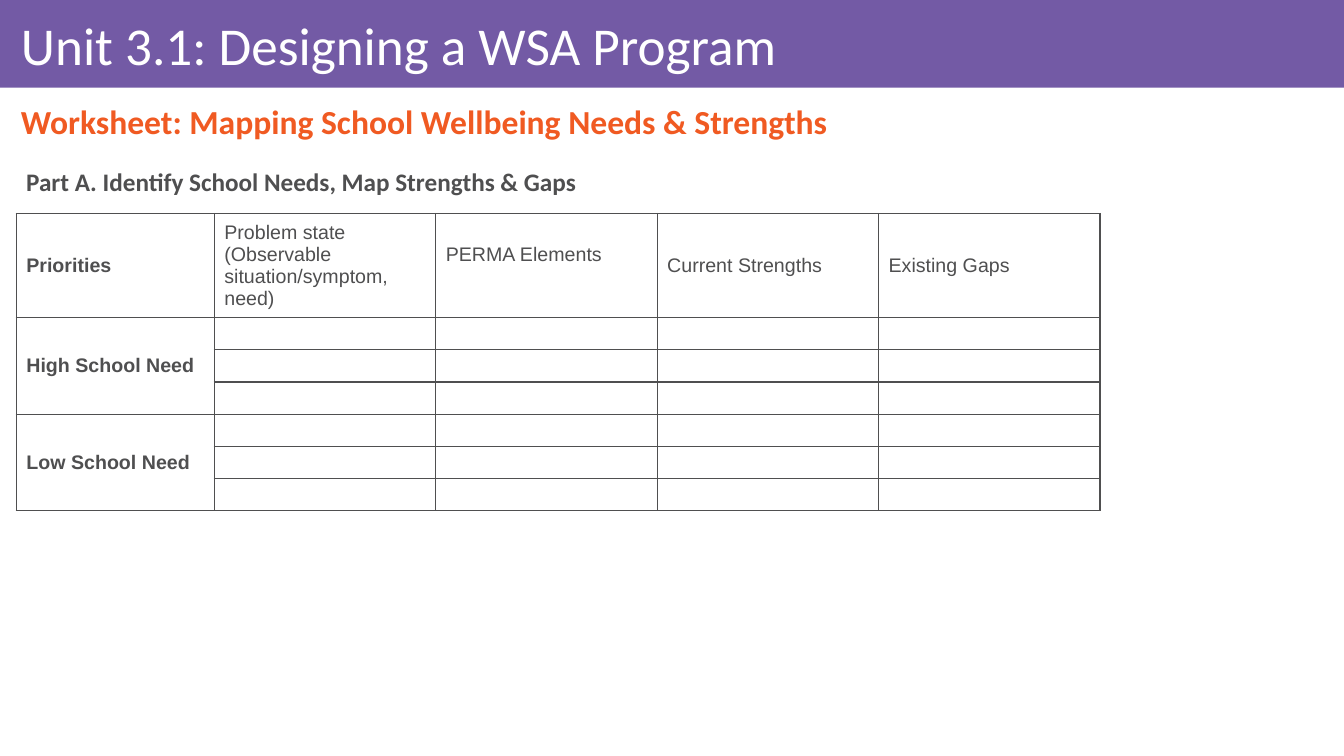
"""Build the worksheet slide for mapping school wellbeing needs and strengths."""
from lxml.etree import SubElement
from pptx import Presentation
from pptx.dml.color import RGBColor
from pptx.enum.shapes import MSO_SHAPE
from pptx.enum.text import MSO_ANCHOR, PP_ALIGN
from pptx.oxml.ns import qn
from pptx.util import Cm, Pt

COLORS = {"purple": "735AA5", "orange": "F05A22", "gray": "4F4F50", "white": "FFFFFF"}


def add_span(para, text, font, size, color, bold=False):
    span = para.add_run()
    span.text = text
    span.font.name = font
    span.font.size = Pt(size)
    span.font.bold = bold
    span.font.color.rgb = RGBColor.from_string(COLORS[color])


def add_borders(cell):
    properties = cell._tc.get_or_add_tcPr()
    for position, side in enumerate(("lnL", "lnR", "lnT", "lnB")):
        line = SubElement(properties, qn(f"a:{side}"), w=str(Pt(1)))
        fill = SubElement(line, qn("a:solidFill"))
        SubElement(fill, qn("a:srgbClr"), val=COLORS["gray"])
        properties.insert(position, line)


deck = Presentation()
deck.slide_width, deck.slide_height = Cm(33.87), Cm(19.05)
page = deck.slides.add_slide(deck.slide_layouts[6])

banner = page.shapes.add_shape(MSO_SHAPE.RECTANGLE, 0, 0, deck.slide_width, Cm(2.21))
banner.shadow.inherit = False
banner.fill.solid()
banner.fill.fore_color.rgb = RGBColor.from_string(COLORS["purple"])
banner.line.fill.background()

headings = [
    ("Unit 3.1: Designing a WSA Program", 0.28, 0.23, 33.17, 1.98,
     38, "white", False, PP_ALIGN.LEFT, 0.9),
    ("Worksheet: Mapping School Wellbeing Needs & Strengths", 0.28, 2.36, 33.17, 1.52,
     24, "orange", True, PP_ALIGN.JUSTIFY, 0.9),
    ("Part A. Identify School Needs, Map Strengths & Gaps", 0.41, 4.06, 17.09, 1.02,
     18, "gray", True, PP_ALIGN.LEFT, 1.0),
]
for text, left, top, width, height, size, color, bold, align, spacing in headings:
    box = page.shapes.add_textbox(Cm(left), Cm(top), Cm(width), Cm(height))
    frame = box.text_frame
    frame.word_wrap = True
    frame.vertical_anchor = MSO_ANCHOR.MIDDLE
    para = frame.paragraphs[0]
    para.alignment = align
    para.line_spacing = spacing
    add_span(para, text, "Calibri", size, color, bold)

labels = {
    (0, 0): "Priorities",
    (0, 1): "Problem state (Observable situation/symptom, need)",
    (0, 2): "PERMA Elements",
    (0, 3): "Current Strengths",
    (0, 4): "Existing Gaps",
    (1, 0): "High School Need",
    (4, 0): "Low School Need",
}
column_widths = [4.99] + [5.58] * 4
row_heights = [2.47] + [0.81] * 6
worksheet = page.shapes.add_table(
    len(row_heights), len(column_widths), Cm(0.41), Cm(5.38),
    Cm(sum(column_widths)), Cm(sum(row_heights))).table
worksheet.first_row = False
worksheet.horz_banding = False
for column, width in zip(worksheet.columns, column_widths):
    column.width = Cm(width)

for row_index, height in enumerate(row_heights):
    worksheet.rows[row_index].height = Cm(height)
    for column_index in range(len(column_widths)):
        cell = worksheet.cell(row_index, column_index)
        cell.fill.background()
        cell.vertical_anchor = MSO_ANCHOR.MIDDLE
        add_borders(cell)
        label = labels.get((row_index, column_index))
        if label:
            add_span(cell.text_frame.paragraphs[0], label, "Arial", 14, "gray",
                     bold=column_index == 0)
        else:
            cell.margin_top = cell.margin_bottom = 0

worksheet.cell(0, 2).margin_bottom = Cm(0.68)
for first_row in (1, 4):
    worksheet.cell(first_row, 0).merge(worksheet.cell(first_row + 2, 0))

deck.save("out.pptx")
